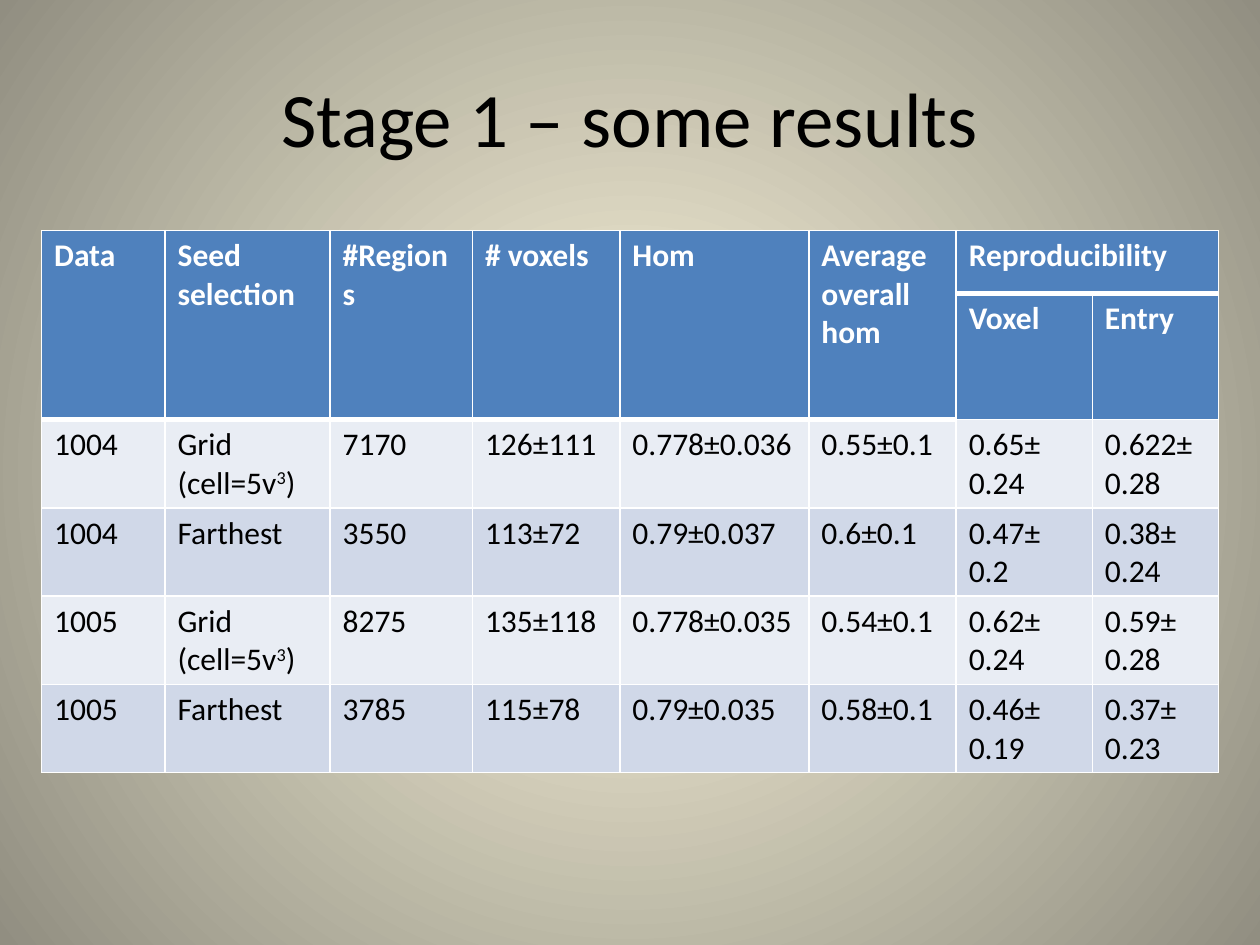
from dataclasses import dataclass

from lxml.etree import SubElement
from pptx import Presentation
from pptx.dml.color import RGBColor
from pptx.enum.text import MSO_ANCHOR, PP_ALIGN
from pptx.oxml import parse_xml
from pptx.oxml.ns import nsdecls, qn
from pptx.util import Inches, Pt


@dataclass(frozen=True)
class Theme:
    font: str = "Calibri"
    title_size: int = 44
    table_size: int = 18
    text: str = "000000"
    header_text: str = "FFFFFF"
    header_fill: str = "4F81BD"
    band_fills: tuple = ("E9EDF4", "D0D8E8")
    border: str = "FFFFFF"
    thin: int = 1
    thick: int = 3
    background: tuple = ("FCF7DD", "918E81")


THEME = Theme()

COLUMN_WIDTHS = [0.98, 1.31, 1.13, 1.17, 1.5, 1.17, 1.08, 1]
ROW_HEIGHTS = [0.5, 0.5, 0.65, 0.47, 0.65, 0.65]
HEADER_ROWS = 2
SINGLE_COLUMNS = 6  # columns whose heading spans both header rows

# A caret pair encloses superscript text
GRID = "Grid (cell=5v^3^)"
ROWS = [
    ["Data", "Seed selection", "#Regions", "# voxels", "Hom",
     "Average overall\nhom", "Reproducibility", ""],
    [""] * SINGLE_COLUMNS + ["Voxel", "Entry"],
    ["1004", GRID, "7170", "126±111", "0.778±0.036", "0.55±0.1", "0.65± 0.24", "0.622±0.28"],
    ["1004", "Farthest", "3550", "113±72", "0.79±0.037", "0.6±0.1", "0.47± 0.2", "0.38± 0.24"],
    ["1005", GRID, "8275", "135±118", "0.778±0.035", "0.54±0.1", "0.62± 0.24", "0.59± 0.28"],
    ["1005", "Farthest", "3785", "115±78", "0.79±0.035", "0.58±0.1", "0.46± 0.19", "0.37± 0.23"],
]


def set_background(slide):
    fill = slide.background.fill
    fill.gradient()
    for stop, color in zip(fill.gradient_stops, THEME.background):
        stop.color.rgb = RGBColor.from_string(color)
    # Turn the linear gradient into a circular one around the centre
    gradient = slide.element.xpath(".//a:gradFill")[0]
    for linear in gradient.findall(qn("a:lin")):
        gradient.remove(linear)
    circle = SubElement(gradient, qn("a:path"), path="circle")
    SubElement(circle, qn("a:fillToRect"), l="50000", t="50000", r="50000", b="50000")


def format_run(run, size, color, bold=False):
    run.font.name = THEME.font
    run.font.size = Pt(size)
    run.font.bold = bold
    run.font.color.rgb = RGBColor.from_string(color)


def add_title(slide, text):
    shape = slide.shapes.add_textbox(Inches(0.5), Inches(0.3), Inches(9), Inches(1.25))
    text_frame = shape.text_frame
    text_frame.word_wrap = True
    text_frame.vertical_anchor = MSO_ANCHOR.MIDDLE
    text_frame.text = text
    paragraph = text_frame.paragraphs[0]
    paragraph.alignment = PP_ALIGN.CENTER
    format_run(paragraph.runs[0], THEME.title_size, THEME.text)


def write_cell(cell, text, color, bold):
    cell.text_frame.text = text
    for paragraph in cell.text_frame.paragraphs:
        first, *others = paragraph.text.split("^")
        paragraph.text = first
        for part in others:
            paragraph.add_run().text = part
        for index, run in enumerate(paragraph.runs):
            format_run(run, THEME.table_size, color, bold)
            if index % 2:
                run.font._element.set("baseline", "30000")


def width_below(row, column):
    is_thick = row == 0 or (row == 1 and column < SINGLE_COLUMNS)
    return THEME.thick if is_thick else THEME.thin


def set_borders(cell, row, column):
    widths = {"L": THEME.thin, "R": THEME.thin,
              "T": width_below(row - 1, column), "B": width_below(row, column)}
    properties = cell._tc.get_or_add_tcPr()
    for index, (side, width) in enumerate(widths.items()):
        properties.insert(index, parse_xml(
            f'<a:ln{side} {nsdecls("a")} w="{Pt(width)}"><a:solidFill>'
            f'<a:srgbClr val="{THEME.border}"/></a:solidFill></a:ln{side}>'))


def add_results_table(slide):
    shape = slide.shapes.add_table(len(ROWS), len(COLUMN_WIDTHS), Inches(0.33),
                                   Inches(1.83), Inches(9.33), Inches(4.1))
    table = shape.table
    table.first_row = table.horz_banding = False
    for column, width in zip(table.columns, COLUMN_WIDTHS):
        column.width = Inches(width)
    for row, height in zip(table.rows, ROW_HEIGHTS):
        row.height = Inches(height)
    shape.height = Inches(4.1)

    # Merged headings
    for column in range(SINGLE_COLUMNS):
        table.cell(0, column).merge(table.cell(1, column))
    table.cell(0, SINGLE_COLUMNS).merge(table.cell(0, SINGLE_COLUMNS + 1))

    # Cell contents, fills and borders
    for row, texts in enumerate(ROWS):
        is_header = row < HEADER_ROWS
        fill = THEME.header_fill if is_header else THEME.band_fills[row % 2]
        color = THEME.header_text if is_header else THEME.text
        for column, text in enumerate(texts):
            cell = table.cell(row, column)
            cell.fill.solid()
            cell.fill.fore_color.rgb = RGBColor.from_string(fill)
            set_borders(cell, row, column)
            if text:
                write_cell(cell, text, color, is_header)


def main():
    presentation = Presentation()
    presentation.slide_width = Inches(10)
    presentation.slide_height = Inches(7.5)
    slide = presentation.slides.add_slide(presentation.slide_layouts[6])
    set_background(slide)
    add_title(slide, "Stage 1 – some results")
    add_results_table(slide)
    presentation.save("out.pptx")


if __name__ == "__main__":
    main()
